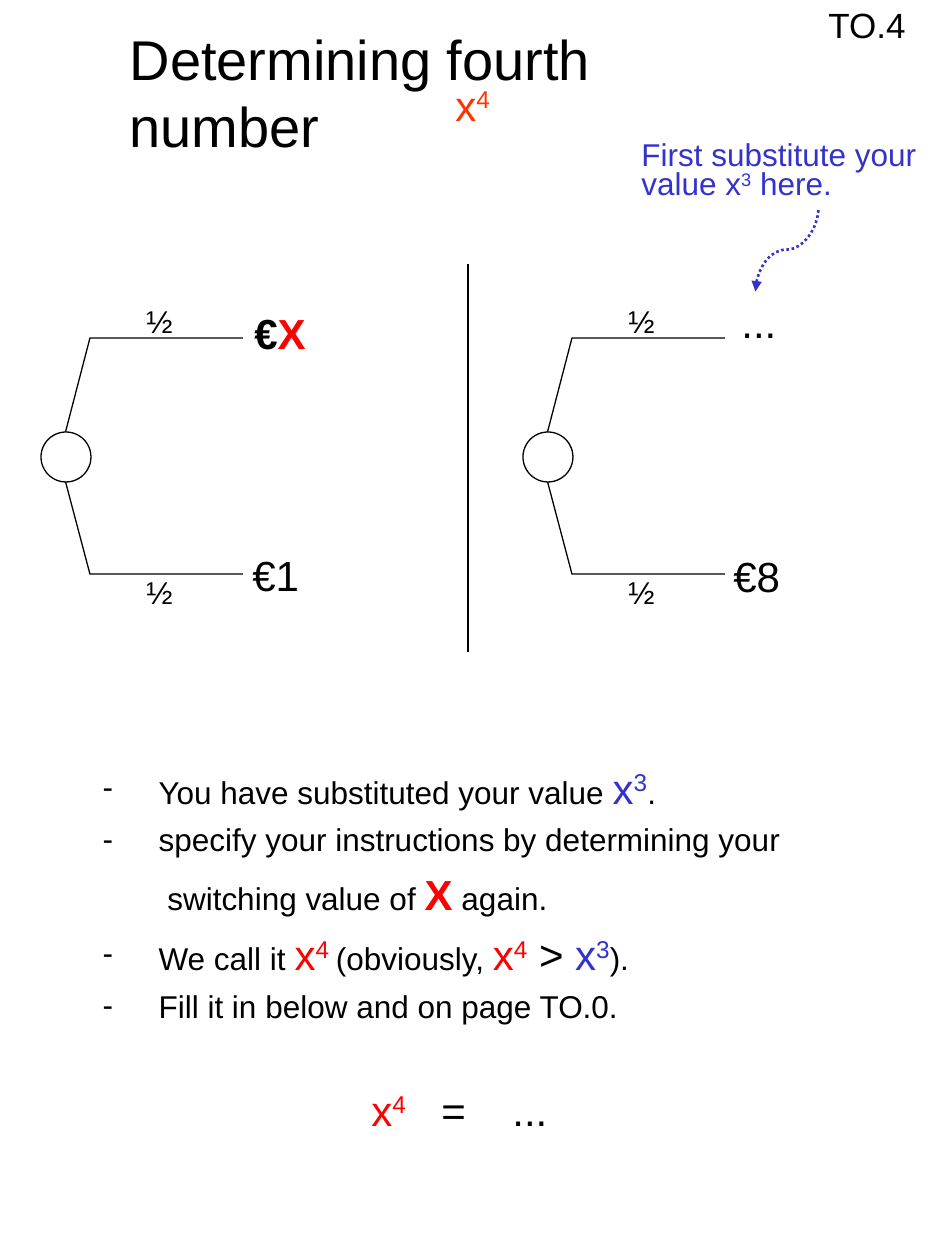
"""Build the slide on determining the fourth number with two chance trees."""
from dataclasses import dataclass
from lxml import etree
from pptx import Presentation, util as u
from pptx.dml.color import RGBColor
from pptx.enum import dml, shapes, text
from pptx.oxml.ns import qn

PX = u.Inches(1) / 126


@dataclass(frozen=True)
class Theme:
    font: str = "Arial"
    black: str = "000000"
    white: str = "FFFFFF"
    red: str = "FF0000"
    orange: str = "FF3300"
    blue: str = "3333CC"
    title: int = 32
    value: int = 24
    page: int = 20
    body: int = 18
    line: float = 0.75
    curve: float = 1.5


THEME = Theme()


def run(words, size=THEME.body, colour=THEME.black, bold=False, raised=False):
    return words, size, colour, bold, raised


def power(exponent, colour):
    return [run("x", THEME.value, colour), run(exponent, THEME.value, colour, raised=True)]


TITLE = [[run("Determining fourth number", THEME.title)]]
STEPS = [
    [run("You have substituted your value "), *power("3", THEME.blue), run(".")],
    [run("specify your instructions by determining your\v switching value of "),
     run("X", THEME.value, THEME.red, bold=True), run(" again.")],
    [run("We call it "), *power("4 ", THEME.red), run("(obviously, "), *power("4", THEME.red),
     run(" > ", THEME.value), *power("3", THEME.blue), run(").")],
    [run("Fill it in below and on page TO.0.")],
]
NOTE = [
    [run("First substitute your", colour=THEME.blue)],
    [run("value x", colour=THEME.blue), run("3", colour=THEME.blue, raised=True),
     run(" here.", colour=THEME.blue)],
]
ANSWER = [[*power("4", THEME.red), run("\t=\t...", THEME.value)]]
LABELS = [
    ((242, 301, 80, 63), [[run("€", THEME.value, bold=True),
                           run("X", THEME.value, THEME.red, bold=True)]]),
    ((443, 73, 80, 63), [power("4", THEME.orange)]),
    ((816, -3, 110, 54), [[run("TO.4", THEME.page)]]),
    ((240, 543, 80, 63), [[run("€1", THEME.value)]]),
    ((721, 544, 80, 63), [[run("€8", THEME.value)]]),
    ((729, 290, 80, 63), [[run("...", THEME.value)]]),
]
TREE_LEFTS = [41, 523]
CIRCLE_TOP, CIRCLE_SIZE = 432, 50
BRANCHES = [(338, 296), (574, 567)]
ANSWER_TABS = [70, 141]


def px(*lengths):
    return [round(length * PX) for length in lengths]


def write(frame, paragraphs, spacings=None):
    frame.word_wrap = True
    for index, runs in enumerate(paragraphs):
        paragraph = frame.paragraphs[0] if index == 0 else frame.add_paragraph()
        paragraph.alignment = text.PP_ALIGN.LEFT
        paragraph.space_before = u.Pt(0)
        if spacings:
            paragraph.line_spacing = spacings[index]
        for words, size, colour, bold, raised in runs:
            for part, line in enumerate(words.split("\v")):
                if part:
                    paragraph.add_line_break()
                piece = paragraph.add_run()
                piece.text = line
                piece.font.name = THEME.font
                piece.font.size = u.Pt(size)
                piece.font.bold = bold
                piece.font.color.rgb = RGBColor.from_string(colour)
                if raised:
                    piece.font._element.set("baseline", "30000")


def add_text(slide, box, paragraphs, spacings=None):
    frame = slide.shapes.add_textbox(*px(*box)).text_frame
    write(frame, paragraphs, spacings)
    return frame


def fill_placeholder(shape, box, paragraphs, spacings):
    shape.left, shape.top, shape.width, shape.height = px(*box)
    frame = shape.text_frame
    frame.auto_size = text.MSO_AUTO_SIZE.NONE
    frame.vertical_anchor = text.MSO_ANCHOR.TOP
    write(frame, paragraphs, spacings)
    return frame


def outline(shape, colour=THEME.black, width=THEME.line):
    shape.line.color.rgb = RGBColor.from_string(colour)
    shape.line.width = u.Pt(width)


def add_line(slide, kind, ends, colour=THEME.black, width=THEME.line):
    connector = slide.shapes.add_connector(kind, *px(*ends))
    outline(connector, colour, width)
    etree.SubElement(connector._element.spPr, qn("a:effectLst"))
    return connector


def add_tree(slide, left):
    middle = CIRCLE_TOP + CIRCLE_SIZE / 2
    for level, label_top in BRANCHES:
        builder = slide.shapes.build_freeform(left + 18, middle, scale=PX)
        builder.add_line_segments([(left + 49, level), (left + 202, level)], close=False)
        branch = builder.convert_to_shape()
        branch.shadow.inherit = False
        branch.fill.background()
        outline(branch)
        add_text(slide, (left + 93, label_top, 54, 50), [[run("½")]])
    circle = slide.shapes.add_shape(shapes.MSO_SHAPE.OVAL,
                                    *px(left, CIRCLE_TOP, CIRCLE_SIZE, CIRCLE_SIZE))
    circle.shadow.inherit = False
    circle.fill.solid()
    circle.fill.fore_color.rgb = RGBColor.from_string(THEME.white)
    outline(circle)


def add_pointer(slide):
    pointer = add_line(slide, shapes.MSO_CONNECTOR.CURVE, (745, 218, 829, 281),
                       THEME.blue, THEME.curve)
    pointer.line.dash_style = dml.MSO_LINE.ROUND_DOT
    properties = pointer._element.spPr
    properties.find(qn("a:xfrm")).set("rot", "16200000")
    etree.SubElement(properties.find(qn("a:ln")), qn("a:headEnd"), type="triangle")


def add_steps(shape):
    frame = fill_placeholder(shape, (90, 746, 741, 285), STEPS, [1.2] * len(STEPS))
    hanging = px(56)[0]
    for paragraph in frame.paragraphs:
        properties = paragraph._p.get_or_add_pPr()
        properties.set("marL", str(hanging))
        properties.set("indent", str(-hanging))
        etree.SubElement(properties, qn("a:buChar"), char="-")


def add_answer(slide):
    frame = add_text(slide, (359, 1078, 230, 63), ANSWER)
    tabs = etree.SubElement(frame.paragraphs[0]._p.get_or_add_pPr(), qn("a:tabLst"))
    for position in px(*ANSWER_TABS):
        etree.SubElement(tabs, qn("a:tab"), pos=str(position), algn="l")


def main():
    presentation = Presentation()
    presentation.slide_width, presentation.slide_height = px(945, 1260)
    slide = presentation.slides.add_slide(presentation.slide_layouts[1])
    fill_placeholder(slide.shapes.title, (117, 18, 520, 150), TITLE, [1.0])
    add_steps(slide.placeholders[1])
    for box, paragraphs in LABELS:
        add_text(slide, box, paragraphs)
    for left in TREE_LEFTS:
        add_tree(slide, left)
    add_line(slide, shapes.MSO_CONNECTOR.STRAIGHT, (468, 264, 468, 652))
    add_text(slide, (629, 139, 306, 69), NOTE, [0.7, 0.8])
    add_pointer(slide)
    add_answer(slide)
    presentation.save("out.pptx")


if __name__ == "__main__":
    main()
